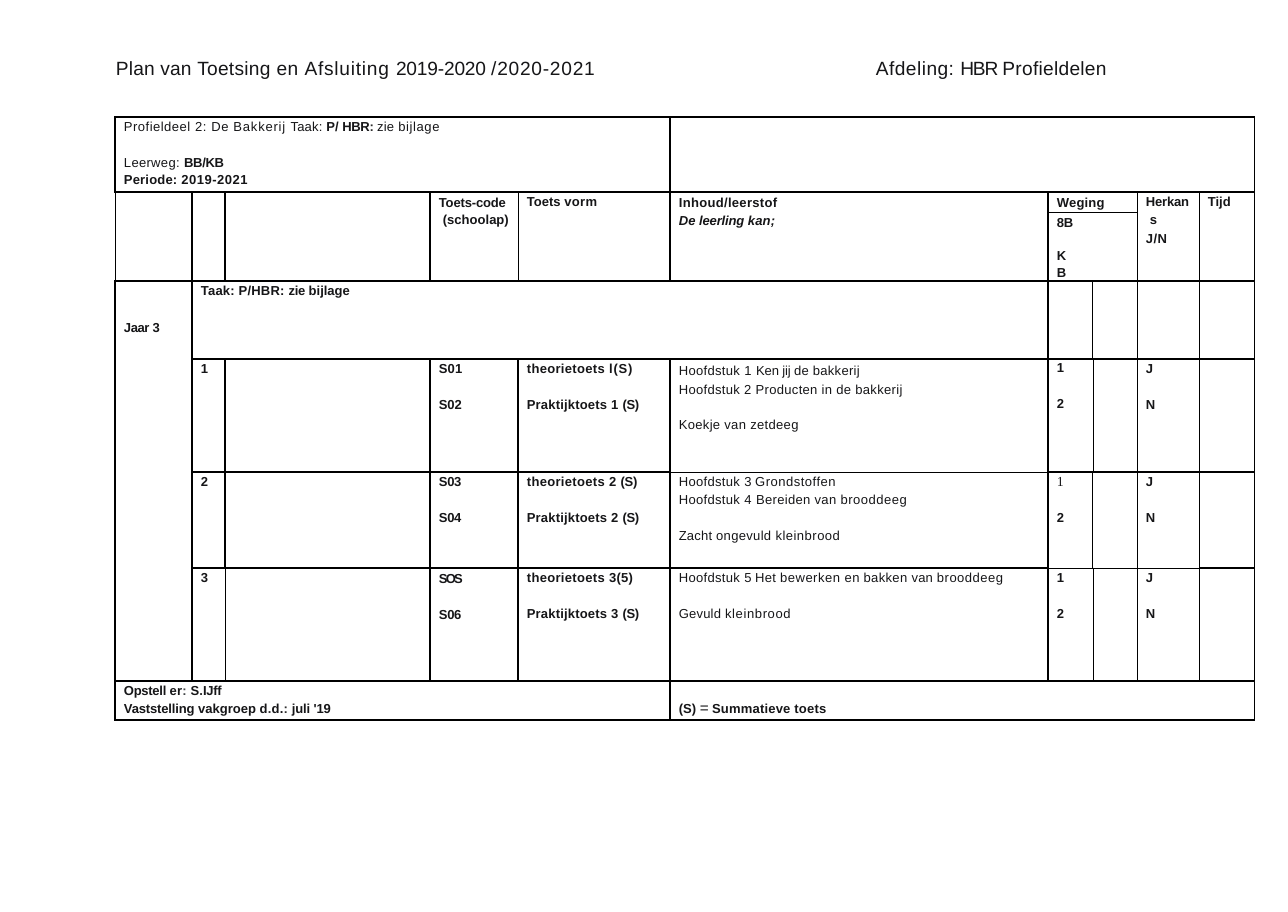
from dataclasses import dataclass, field

from lxml import etree
from pptx import Presentation
from pptx.dml.color import RGBColor
from pptx.enum.text import MSO_ANCHOR, MSO_AUTO_SIZE, PP_ALIGN
from pptx.oxml.ns import qn
from pptx.util import Emu, Pt

TOP, LEFT = MSO_ANCHOR.TOP, PP_ALIGN.LEFT
NO_FIT = MSO_AUTO_SIZE.NONE
INK, GREY, SLATE, BLACK = "161618", "2F2F2F", "414446", "000000"
FONT, SERIF = "Arial", "Times New Roman"
BODY, HEADING = 8.5, 12.5
EMU_PER_PX = 8290
TEST_GAP = 13.8
COLS = [77, 33, 205, 88, 152, 378, 45, 45, 62, 55]
ROWS = [75, 20, 69, 78, 113, 96, 113, 39]
TABLE_X, TABLE_Y = 115, 117
# first row, first column, last row, last column
MERGES = [(0, 0, 0, 4), (0, 5, 0, 9), (1, 6, 1, 7), (2, 6, 2, 7),
          (3, 0, 6, 0), (3, 1, 3, 5), (7, 0, 7, 4), (7, 5, 7, 9)]
MERGES += [(1, c, 2, c) for c in (0, 1, 2, 3, 4, 5, 8, 9)]
# sides drawn at half weight
THIN = {(1, 0): "L", (1, 3): "R", (1, 4): "L", (1, 5): "B", (1, 6): "B",
        (2, 6): "LT", (4, 2): "T", (4, 5): "B", (4, 6): "R", (4, 7): "L",
        (4, 9): "R", (5, 5): "T", (5, 6): "B", (5, 7): "B", (5, 8): "B",
        (6, 1): "R", (6, 2): "L", (6, 6): "TRB", (6, 7): "LTB", (6, 8): "TB"}


@dataclass(frozen=True)
class Run:
    text: str
    spacing: float = 0
    bold: bool | None = None
    color: str | None = None
    font: str | None = None
    size: float | None = None


@dataclass(frozen=True)
class Para:
    runs: list[Run]
    before: float = 0
    line: float | Pt | None = None
    bold: bool = True
    italic: bool = False
    indent: int = 0
    size: float = BODY


@dataclass(frozen=True)
class CellText:
    row: int
    col: int
    paras: list[Para] = field(default_factory=list)
    top: int = 3


def px(n: int) -> Emu:
    return Emu(n * EMU_PER_PX)


def rgb(color: str) -> RGBColor:
    return RGBColor.from_string(color)


def line(text: str, spacing: float = 0, **kw) -> Para:
    return Para([Run(text, spacing)], **kw)


def plain(text: str, spacing: float = 0.2, **kw) -> Para:
    return line(text, spacing, bold=False, **kw)


def pair(first: Para, second: str, spacing: float = 0) -> list[Para]:
    return [first, line(second, spacing, before=TEST_GAP)]


def practical(number: int) -> Para:
    return Para([Run(f"Praktijktoets {number} ", 0.1), Run("(S)", -0.2)],
                before=TEST_GAP)


CELLS = [
    CellText(0, 0, [
        Para([Run("Profieldeel ", 0.3), Run("2: De ", 0.4), Run("Bakkerij ", 0.5),
              Run("Taak: ", 0.1), Run("P/ ", 0, True), Run("HBR", -0.3, True),
              Run(": ", -0.3, True, GREY), Run("zie ", 0.1), Run("bijlage", 0.4)],
             bold=False),
        Para([Run("Leerweg: ", 0.2), Run("BB/KB", -0.2, True)],
             before=12.3, line=1.18, bold=False),
        Para([Run("Periode: ", 0.1), Run("2019-2021", 0.3)], line=1.18)]),
    CellText(1, 3, [line("Toets-code", -0.1, line=1.18),
                    line("(schoolap)", line=1.18, indent=4)], top=1),
    CellText(1, 4, [Para([Run("Toets "), Run("vorm", 0.2)])]),
    CellText(1, 5, [line("Inhoud/leerstof", 0.2),
                    Para([Run("De "), Run("leerling ", -0.1), Run("kan;", 0.1)],
                         before=1.8, italic=True)], top=4),
    CellText(1, 6, [line("Weging", 0.1, line=Pt(9.7))]),
    CellText(1, 8, [line("Herkan", -0.1, line=1.2),
                    line("s", -0.8, line=1.2, indent=4),
                    line("J/N", 0.3, before=2.5, line=Pt(9.9))], top=0),
    CellText(1, 9, [line("Tijd")]),
    CellText(2, 6, [line("8B", -0.1, line=Pt(11)),
                    line("K", -0.1, before=11, line=Pt(11)),
                    line("B", -0.1, line=Pt(11))], top=1),
    CellText(3, 0, [Para([Run("Jaar ", -0.3), Run("3", 0.2)])], top=40),
    CellText(3, 1, [Para([Run("Taak: P/HBR: ", 0.1), Run("zie ", -0.2),
                          Run("bijlage")])]),
    CellText(4, 3, pair(line("S01", 0.1), "S02", -0.1)),
    CellText(5, 3, pair(line("S03", -0.2), "S04", -0.2)),
    CellText(6, 3, pair(line("SOS", -1.2), "S06", -0.2), top=4),
    CellText(4, 4, [Para([Run("theorietoets ", 0.2), Run("l(S)", 0.5)]),
                    practical(1)]),
    CellText(5, 4, [Para([Run("theorietoets 2 ", 0.2), Run("(S)", -0.2)]),
                    practical(2)]),
    CellText(6, 4, [Para([Run("theorietoets ", 0.2), Run("3(5)", 0.1)]),
                    practical(3)]),
    CellText(4, 5, [
        Para([Run("Hoofdstuk ", 0.2), Run("1 ", 0.3), Run("Ken jij ", -0.1),
              Run("de ", 0.1), Run("bakkerij", 0.2)], line=Pt(12.3), bold=False),
        plain("Hoofdstuk 2 Producten in de bakkerij", line=Pt(12.3)),
        plain("Koekje van zetdeeg", before=13.4)], top=1),
    CellText(5, 5, [
        Para([Run("Hoofdstuk ", 0.2), Run("3 "), Run("Grondstoffen", 0.3)],
             bold=False),
        Para([Run("Hoofdstuk ", 0.2), Run("4 ", 0.3), Run("Bereiden van ", 0.2),
              Run("brooddeeg", 0.3)], before=2, bold=False),
        Para([Run("Zacht ", 0.1), Run("ongevuld ", 0.2), Run("kleinbrood", 0.3)],
             before=TEST_GAP, bold=False)]),
    CellText(6, 5, [
        Para([Run("Hoofdstuk ", 0.2), Run("5 ", -0.1), Run("Het ", 0.2),
              Run("bewerken ", 0.3), Run("en bakken ", 0.2), Run("van ", 0.1),
              Run("brooddeeg", 0.3)], bold=False),
        Para([Run("Gevuld ", 0.1), Run("kleinbrood", 0.4)],
             before=TEST_GAP, bold=False)]),
    CellText(4, 6, pair(line("1"), "2"), top=2),
    CellText(5, 6, pair(Para([Run("1", font=SERIF, size=9)], bold=False), "2"),
             top=2),
    CellText(6, 6, pair(line("1"), "2")),
    CellText(7, 0, [
        Para([Run("Opstell ", -0.2), Run("er", 0.1), Run(": ", 0.1, color=SLATE),
              Run("S", -0.2), Run(".", -0.2, color=GREY), Run("IJff", -0.2)]),
        Para([Run("Vaststelling ", -0.1), Run("vakgroep "), Run("d", 0.1),
              Run(".", 0.1, color=GREY), Run("d.", 0.1), Run(": ", 0.1, color=GREY),
              Run("juli '19", -0.1)], before=2, line=Pt(9.7))]),
    CellText(7, 5, [Para([Run("(S) "), Run("= ", -0.6, False, size=10),
                          Run("Summatieve toets", 0.1)], line=Pt(11.2))], top=19),
]
for number in (1, 2, 3):
    CELLS += [CellText(number + 3, 1, [line(str(number))]),
              CellText(number + 3, 8, pair(line("J"), "N"))]

TITLE = Para([Run("Plan van ", 0.1), Run("Toetsing ", 0.2), Run("en ", 0.3),
              Run("Afsluiting ", 0.5), Run("2019-2020 ", -0.1),
              Run("/2020-2021", 0.5)], bold=False, size=HEADING)
DEPARTMENT = Para([Run("Afdeling: ", 0.3), Run("HBR ", -0.8),
                   Run("Profieldelen", 0.2)], bold=False, size=HEADING)


def write(tf, paras: list[Para]) -> None:
    for i, para in enumerate(paras):
        p = tf.paragraphs[0] if i == 0 else tf.add_paragraph()
        p.alignment = LEFT
        p.space_before = Pt(para.before)
        p.line_spacing = para.line
        if para.indent:
            p._p.get_or_add_pPr().set("marL", str(px(para.indent)))
        p.font.name, p.font.size = FONT, Pt(para.size)
        p.font.bold, p.font.italic = para.bold, para.italic
        p.font.color.rgb = rgb(INK)
        for run in para.runs:
            r = p.add_run()
            r.text = run.text
            if run.spacing:
                r._r.get_or_add_rPr().set("spc", str(round(run.spacing * 100)))
            if run.bold is not None:
                r.font.bold = run.bold
            if run.color:
                r.font.color.rgb = rgb(run.color)
            if run.font:
                r.font.name = run.font
            if run.size:
                r.font.size = Pt(run.size)


def add_borders(cell, thin: str) -> None:
    tc_pr = cell._tc.get_or_add_tcPr()
    for side in "LRTB":
        width = Pt(0.5 if side in thin else 1)
        ln = etree.SubElement(tc_pr, qn(f"a:ln{side}"), w=str(width))
        fill = etree.SubElement(ln, qn("a:solidFill"))
        etree.SubElement(fill, qn("a:srgbClr"), val=BLACK)


def add_plan_table(slide) -> None:
    frame = slide.shapes.add_table(len(ROWS), len(COLS), px(TABLE_X), px(TABLE_Y),
                                   px(sum(COLS)), px(sum(ROWS)))
    table = frame.table
    table.first_row = table.horz_banding = False
    for c, width in enumerate(COLS):
        table.columns[c].width = px(width)
    for r, height in enumerate(ROWS):
        table.rows[r].height = px(height)
        for c in range(len(COLS)):
            cell = table.cell(r, c)
            add_borders(cell, THIN.get((r, c), ""))
            cell.fill.background()
            cell.margin_left = px(8 if c >= 8 else 9)
            cell.margin_right = cell.margin_top = cell.margin_bottom = 0
            cell.text_frame.paragraphs[0].font.size = Pt(BODY)
    for r1, c1, r2, c2 in MERGES:
        table.cell(r1, c1).merge(table.cell(r2, c2))
    for item in CELLS:
        cell = table.cell(item.row, item.col)
        cell.margin_top = px(item.top)
        write(cell.text_frame, item.paras)


def set_heading(sp, x: int, width: int, para: Para) -> None:
    sp.left, sp.top, sp.width, sp.height = px(x), px(55), px(width), px(26)
    tf = sp.text_frame
    tf.word_wrap, tf.auto_size, tf.vertical_anchor = True, NO_FIT, TOP
    tf.margin_left = tf.margin_top = px(1)
    tf.margin_right = tf.margin_bottom = 0
    write(tf, [para])


def main() -> None:
    prs = Presentation()
    prs.slide_width, prs.slide_height = px(1288), px(912)
    slide = prs.slides.add_slide(prs.slide_layouts[5])
    add_plan_table(slide)
    set_heading(slide.shapes.title, 115, 490, TITLE)
    set_heading(slide.shapes.add_textbox(0, 0, 0, 0), 875, 245, DEPARTMENT)
    prs.save("out.pptx")


if __name__ == "__main__":
    main()
